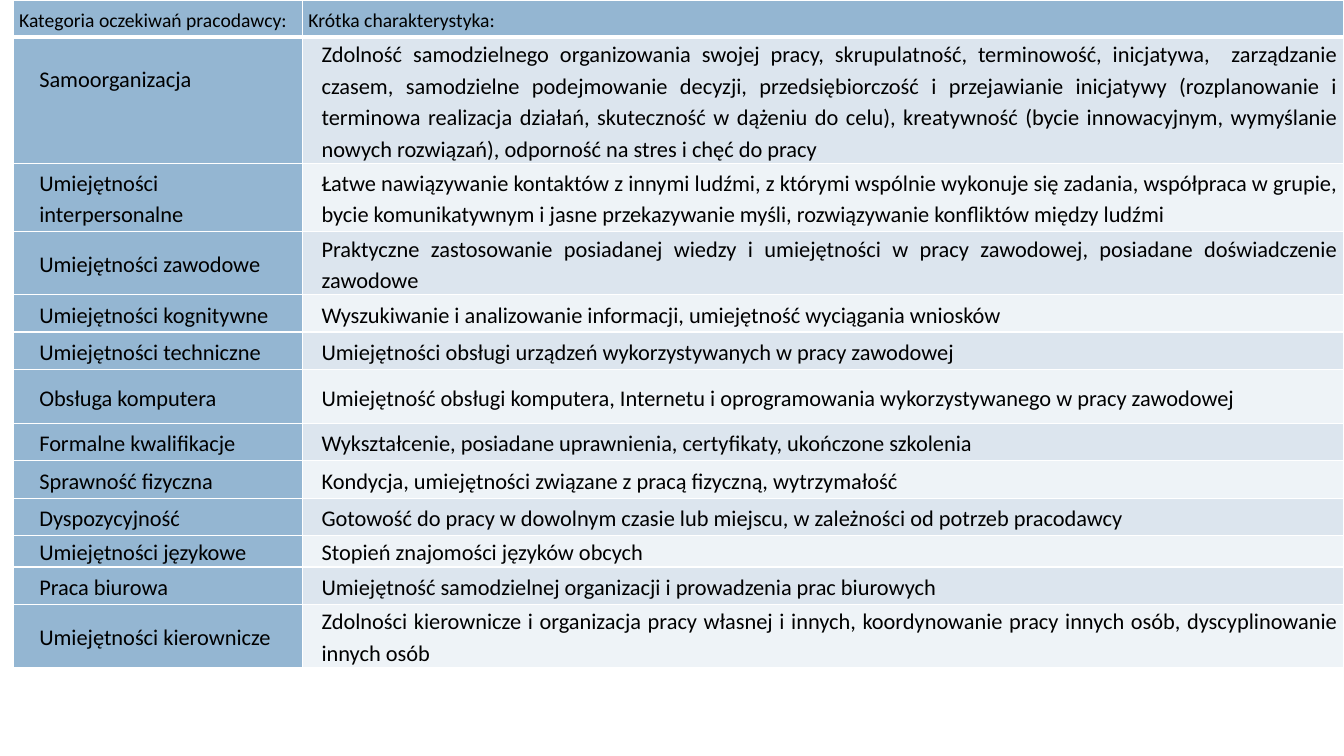
from lxml import etree
from pptx import Presentation
from pptx import util as u
from pptx.dml.color import RGBColor
from pptx.enum import text
from pptx.oxml import ns

HUES = {"head": "94B6D2", "odd": "DCE5EE", "even": "EEF3F7",
        "line": "FFFFFF", "ink": "000000"}
COLS = [2.87, 10.33]
INDENTS = [0.2, 0.13]
ROWS = [
    (0.37, "Kategoria oczekiwań pracodawcy:", "Krótka charakterystyka:"),
    (1.23, "Samoorganizacja",
     "Zdolność samodzielnego organizowania swojej pracy, skrupulatność, "
     "terminowość, inicjatywa,  zarządzanie czasem, samodzielne podejmowanie "
     "decyzji, przedsiębiorczość i przejawianie inicjatywy (rozplanowanie i "
     "terminowa realizacja działań, skuteczność w dążeniu do celu), "
     "kreatywność (bycie innowacyjnym, wymyślanie nowych rozwiązań), "
     "odporność na stres i chęć do pracy"),
    (0.68, "Umiejętności interpersonalne",
     "Łatwe nawiązywanie kontaktów z innymi ludźmi, z którymi wspólnie "
     "wykonuje się zadania, współpraca w grupie, bycie komunikatywnym i jasne "
     "przekazywanie myśli, rozwiązywanie konfliktów między ludźmi"),
    (0.61, "Umiejętności zawodowe",
     "Praktyczne zastosowanie posiadanej wiedzy i umiejętności w pracy "
     "zawodowej, posiadane doświadczenie zawodowe"),
    (0.37, "Umiejętności kognitywne",
     "Wyszukiwanie i analizowanie informacji, umiejętność wyciągania wniosków"),
    (0.37, "Umiejętności techniczne",
     "Umiejętności obsługi urządzeń wykorzystywanych w pracy zawodowej"),
    (0.54, "Obsługa komputera",
     "Umiejętność obsługi komputera, Internetu i oprogramowania "
     "wykorzystywanego w pracy zawodowej"),
    (0.37, "Formalne kwalifikacje",
     "Wykształcenie, posiadane uprawnienia, certyfikaty, ukończone szkolenia"),
    (0.37, "Sprawność fizyczna",
     "Kondycja, umiejętności związane z pracą fizyczną, wytrzymałość"),
    (0.37, "Dyspozycyjność",
     "Gotowość do pracy w dowolnym czasie lub miejscu, w zależności od "
     "potrzeb pracodawcy"),
    (0.29, "Umiejętności językowe", "Stopień znajomości języków obcych"),
    (0.37, "Praca biurowa",
     "Umiejętność samodzielnej organizacji i prowadzenia prac biurowych"),
    (0.61, "Umiejętności kierownicze",
     "Zdolności kierownicze i organizacja pracy własnej i innych, "
     "koordynowanie pracy innych osób, dyscyplinowanie innych osób"),
]


def edge(cell, widths):
    """Draw the borders of a cell with widths in points, by side."""
    props = cell._tc.get_or_add_tcPr()
    for side, width in widths.items():
        line = etree.SubElement(props, ns.qn("a:ln" + side), w=str(u.Pt(width)))
        fill = etree.SubElement(line, ns.qn("a:solidFill"))
        etree.SubElement(fill, ns.qn("a:srgbClr"), val=HUES["line"])


def write(cell, words, head, indent):
    """Set and format the text of a cell."""
    cell.vertical_anchor = text.MSO_ANCHOR.MIDDLE
    cell.margin_left = cell.margin_right = u.Inches(0.06)
    cell.margin_top = cell.margin_bottom = 0
    cell.text_frame.text = words
    para = cell.text_frame.paragraphs[0]
    para.line_spacing = 1.15
    para.space_after = u.Pt(10)
    if not head:
        para.alignment = text.PP_ALIGN.JUSTIFY
        props = para._p.get_or_add_pPr()
        props.set("marL", str(u.Inches(indent)))
        props.set("indent", "0")
    font = para.runs[0].font
    font.name = "Calibri"
    font.size = u.Pt(14 if head else 16)
    font.bold = False
    font.color.rgb = RGBColor.from_string(HUES["ink"])


def grid(slide, left, top, width, height):
    """Place the table of employer expectations in the given box."""
    table = slide.shapes.add_table(
        len(ROWS), len(COLS), u.Inches(left), u.Inches(top),
        u.Inches(width), u.Inches(height)).table
    table.first_row = table.horz_banding = False
    for col, size in zip(table.columns, COLS):
        col.width = u.Inches(size)
    for r, (size, *words) in enumerate(ROWS):
        table.rows[r].height = u.Inches(size)
        for c, word in enumerate(words):
            cell = table.cell(r, c)
            write(cell, word, r == 0, INDENTS[c])
            edge(cell, {"L": 1, "R": 1, "T": 1, "B": 3 if r == 0 else 1})
            hue = "head" if r == 0 or c == 0 else "odd" if r % 2 else "even"
            cell.fill.solid()
            cell.fill.fore_color.rgb = RGBColor.from_string(HUES[hue])
    table.cell(1, 0).margin_bottom = u.Inches(0.45)


def main():
    """Build the slide and save it."""
    deck = Presentation()
    deck.slide_width, deck.slide_height = u.Inches(13.33), u.Inches(7.5)
    slide = deck.slides.add_slide(deck.slide_layouts[6])
    grid(slide, 0.13, 0, sum(COLS), sum(row[0] for row in ROWS))
    deck.save("out.pptx")


if __name__ == "__main__":
    main()
